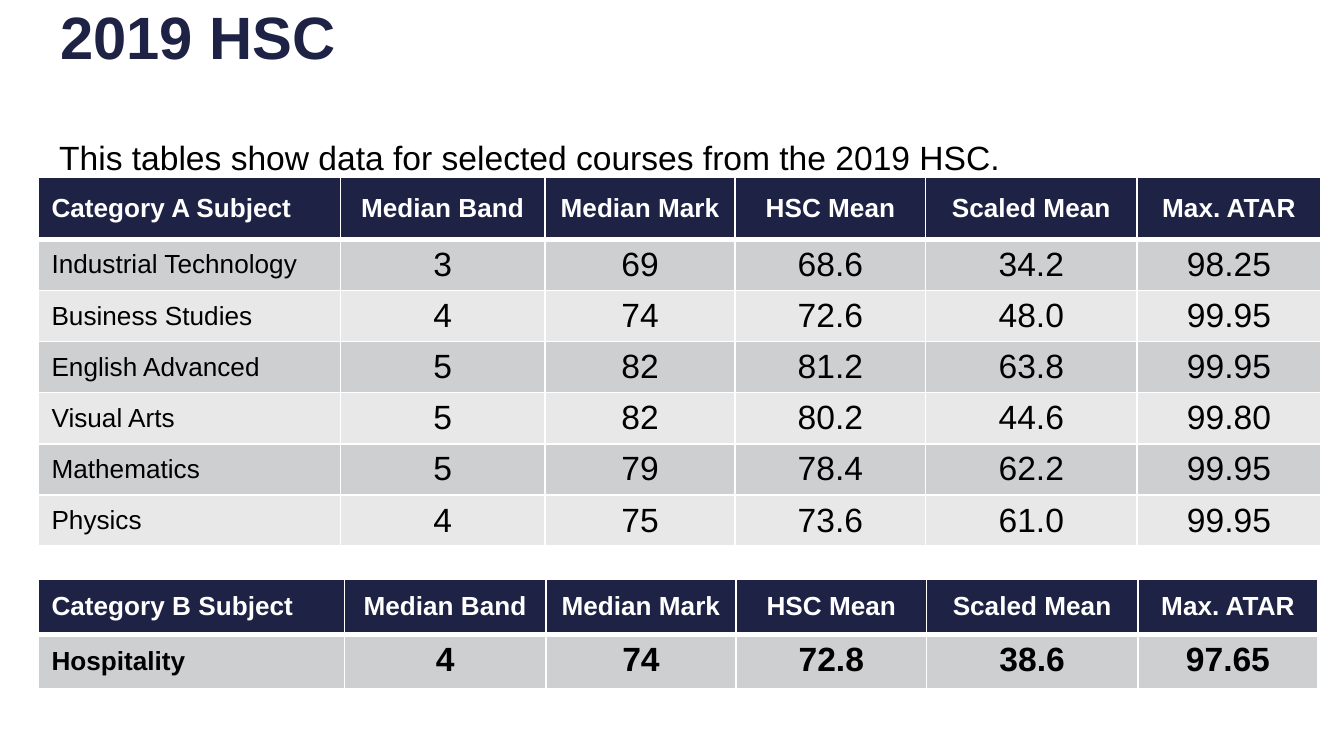
from lxml.etree import SubElement
from pptx import Presentation
from pptx.dml.color import RGBColor
from pptx.enum.text import MSO_ANCHOR, MSO_AUTO_SIZE, PP_ALIGN
from pptx.oxml.ns import qn
from pptx.util import Pt

NAVY, WHITE, BLACK = "1E2245", "FFFFFF", "000000"
BANDS = ("CECFD0", "E8E8E9")
MEASURES = ("Median Band", "Median Mark", "HSC Mean", "Scaled Mean", "Max. ATAR")

CATEGORY_A = [
    ("Category A Subject", *MEASURES),
    ("Industrial Technology", "3", "69", "68.6", "34.2", "98.25"),
    ("Business Studies", "4", "74", "72.6", "48.0", "99.95"),
    ("English Advanced", "5", "82", "81.2", "63.8", "99.95"),
    ("Visual Arts", "5", "82", "80.2", "44.6", "99.80"),
    ("Mathematics", "5", "79", "78.4", "62.2", "99.95"),
    ("Physics", "4", "75", "73.6", "61.0", "99.95"),
]
CATEGORY_B = [
    ("Category B Subject", *MEASURES),
    ("Hospitality", "4", "74", "72.8", "38.6", "97.65"),
]


def rgb(color):
    return RGBColor.from_string(color)


def add_run(paragraph, text, size, color, bold=False):
    run = paragraph.add_run()
    run.text = text
    run.font.name = "Arial"
    run.font.size = Pt(size)
    run.font.bold = bold
    run.font.color.rgb = rgb(color)


def fill_placeholder(shape, box, text, size, color, bold=False):
    """Move a placeholder and give it one plain, left-aligned line."""
    shape.left, shape.top, shape.width, shape.height = (Pt(value) for value in box)
    frame = shape.text_frame
    frame.auto_size = MSO_AUTO_SIZE.NONE
    frame.vertical_anchor = MSO_ANCHOR.TOP
    paragraph = frame.paragraphs[0]
    properties = paragraph._p.get_or_add_pPr()
    properties.set("marL", "0")
    properties.set("indent", "0")
    SubElement(properties, qn("a:buNone"))
    paragraph.alignment = PP_ALIGN.LEFT
    paragraph.space_before = Pt(0)
    add_run(paragraph, text, size, color, bold)
    return paragraph


def set_borders(cell, top, bottom):
    """Draw white cell borders; the side borders are 1 pt."""
    properties = cell._tc.get_or_add_tcPr()
    for tag, width in (("a:lnL", 1), ("a:lnR", 1), ("a:lnT", top), ("a:lnB", bottom)):
        line = SubElement(properties, qn(tag), w=str(Pt(width)))
        solid = SubElement(line, qn("a:solidFill"))
        SubElement(solid, qn("a:srgbClr"), val=WHITE)


def format_cell(cell, text, row, column, bold_body):
    header, subject = row == 0, column == 0
    # A thick rule separates the header from the data
    set_borders(cell, top=3 if row == 1 else 1, bottom=3 if header else 1)
    cell.fill.solid()
    cell.fill.fore_color.rgb = rgb(NAVY if header else BANDS[(row - 1) % 2])
    cell.vertical_anchor = MSO_ANCHOR.MIDDLE if header or subject else MSO_ANCHOR.TOP
    paragraph = cell.text_frame.paragraphs[0]
    paragraph.alignment = PP_ALIGN.LEFT if subject else PP_ALIGN.CENTER
    add_run(paragraph, text, 14 if header or subject else 18,
            WHITE if header else BLACK, header or bold_body)


def add_subject_table(slide, top, rows, widths, header_height, row_height, bold_body=False):
    heights = [header_height] + [row_height] * (len(rows) - 1)
    table = slide.shapes.add_table(len(rows), len(widths), Pt(20.4), Pt(top),
                                   Pt(sum(widths)), Pt(sum(heights))).table
    for column, width in zip(table.columns, widths):
        column.width = Pt(width)
    for table_row, height in zip(table.rows, heights):
        table_row.height = Pt(height)
    for row, values in enumerate(rows):
        for column, text in enumerate(values):
            format_cell(table.cell(row, column), text, row, column, bold_body)


def main():
    presentation = Presentation()
    presentation.slide_width, presentation.slide_height = Pt(720), Pt(405)
    slide = presentation.slides.add_slide(presentation.slide_layouts[1])

    # Title and introduction
    title = fill_placeholder(slide.shapes.title, (25, 0.7, 669, 67.7),
                             "2019 HSC", 32, NAVY, bold=True)
    title.line_spacing = 0.9
    fill_placeholder(slide.placeholders[1], (24.5, 70, 669, 253),
                     "This tables show data for selected courses from the 2019 HSC.",
                     18, BLACK)

    # One table per course category
    add_subject_table(slide, 95.2, CATEGORY_A, (162, 109.5, 102, 102, 113.2, 98.6), 33, 24)
    add_subject_table(slide, 310.5, CATEGORY_B, (164.2, 107.8, 102, 102, 113.2, 96.6),
                      29.2, 29.2, bold_body=True)

    presentation.save("out.pptx")


if __name__ == "__main__":
    main()
